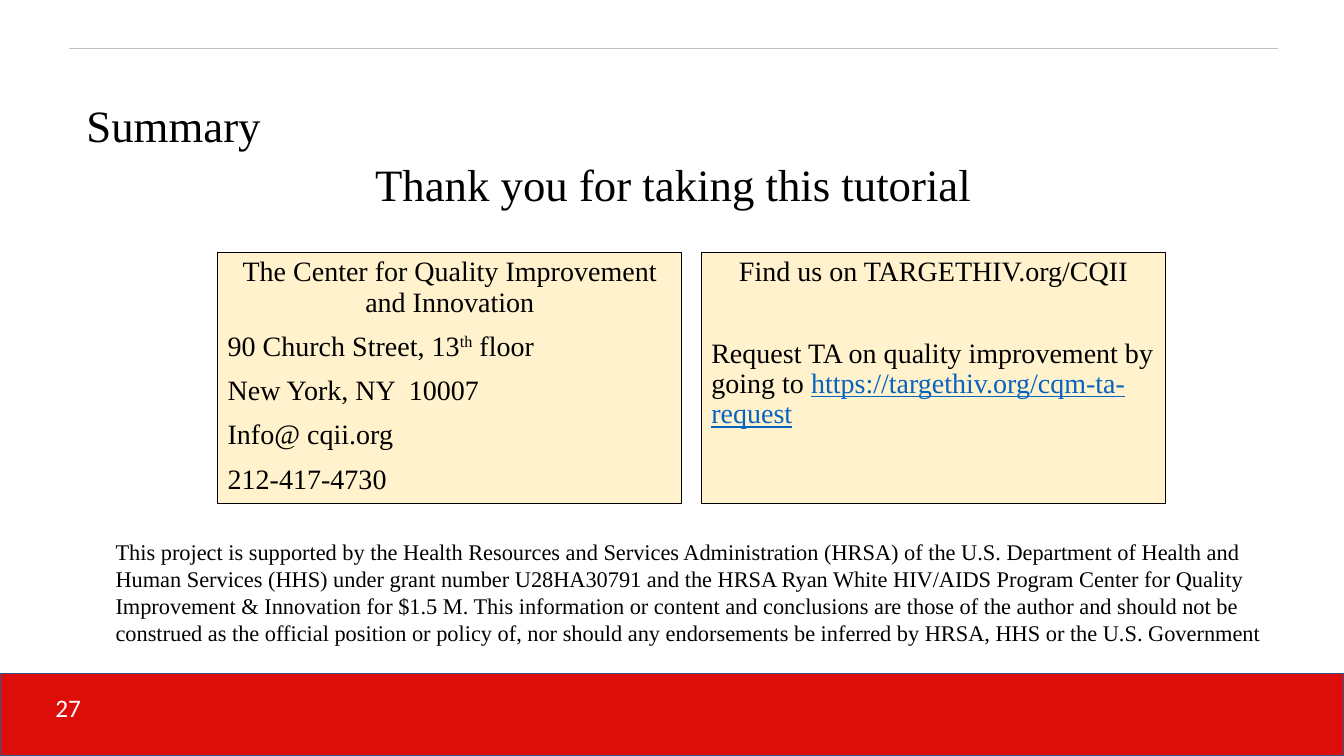
"""Build the closing summary slide with contact boxes and a funding statement."""
from lxml.etree import SubElement
from pptx import Presentation
from pptx.dml.color import RGBColor
from pptx.enum.shapes import MSO_CONNECTOR, MSO_SHAPE
from pptx.enum.text import MSO_ANCHOR, MSO_AUTO_SIZE, PP_ALIGN
from pptx.oxml.ns import qn
from pptx.util import Pt

THEME = {
    "serif": "Times New Roman", "sans": "Calibri",
    "heading": Pt(32), "body": Pt(20), "number": Pt(18), "note": Pt(16),
    "black": RGBColor.from_string("000000"), "white": RGBColor.from_string("FFFFFF"),
    "red": RGBColor.from_string("DD0E09"), "navy": RGBColor.from_string("325491"),
    "cream": RGBColor.from_string("FFF2CC"), "grey": RGBColor.from_string("BFBFBF"),
    "link": RGBColor.from_string("0563C1"),
}
LEFT, CENTER = PP_ALIGN.LEFT, PP_ALIGN.CENTER


def add_box(s, at, fill, line, width):
    """Add a filled and outlined rectangle."""
    box = s.shapes.add_shape(MSO_SHAPE.RECTANGLE, *map(Pt, at))
    box.shadow.inherit = False
    box.fill.solid()
    box.fill.fore_color.rgb = THEME[fill]
    box.line.color.rgb = THEME[line]
    box.line.width = Pt(width)
    return box


def write(sp, paragraphs, size, color="black", font="serif", spacing=0.9, anchor=MSO_ANCHOR.TOP):
    """Fill a shape with (alignment, space before, runs) paragraphs."""
    tf = sp.text_frame
    frame = {"word_wrap": True, "auto_size": MSO_AUTO_SIZE.NONE, "vertical_anchor": anchor}
    for name, value in frame.items():
        setattr(tf, name, value)
    for i, (align, before, runs) in enumerate(paragraphs):
        p = tf.add_paragraph() if i else tf.paragraphs[0]
        p.alignment, p.space_before, p.line_spacing = align, Pt(before), spacing
        for text, style in runs:
            r = p.add_run()
            r.text = text
            look = {"name": THEME[font], "size": THEME[size], "underline": style == "link"}
            for name, value in look.items():
                setattr(r.font, name, value)
            r.font.color.rgb = THEME["link" if style == "link" else color]
            if style == "super":
                r.font._element.set("baseline", "30000")


prs = Presentation()
prs.slide_width, prs.slide_height = Pt(960), Pt(540)
s = prs.slides.add_slide(prs.slide_layouts[5])

add_box(s, (0, 481, 960, 59), "red", "navy", 1)
rule = s.shapes.add_connector(MSO_CONNECTOR.STRAIGHT, Pt(49), Pt(34.5), Pt(913), Pt(34.5))
rule.line.color.rgb = THEME["grey"]
rule.line.width = Pt(0.5)
SubElement(rule._element.spPr, qn("a:effectLst"))

title = s.shapes.title
for name, value in {"left": 54.5, "top": 62.5, "width": 828, "height": 58.5}.items():
    setattr(title, name, Pt(value))
write(title, [(LEFT, 0, [("Summary", "")])], "heading", anchor=MSO_ANCHOR.MIDDLE)

contact = [
    (CENTER, 0, [("The Center for Quality Improvement and Innovation", "")]),
    (LEFT, 10, [("90 Church Street, 13", ""), ("th", "super"), (" floor", "")]),
    (LEFT, 10, [("New York, NY  10007", "")]),
    (LEFT, 10, [("Info@ cqii.org", "")]),
    (LEFT, 10, [("212-417-4730", "")]),
]
online = [
    (CENTER, 0, [("Find us on TARGETHIV.org/CQII", "")]),
    (LEFT, 36.5, [("Request TA on quality improvement by going to ", ""),
                  ("https://targethiv.org/cqm-ta-request", "link")]),
]
for i, paragraphs in enumerate((contact, online)):
    box = add_box(s, (155.5 + i * 345.5, 180.5, 331.5, 179.5), "cream", "black", 0.75)
    write(box, paragraphs, "body")

funding = (
    "This project is supported by the Health Resources and Services Administration (HRSA) "
    "of the U.S. Department of Health and Human Services (HHS) under grant number U28HA30791 "
    "and the HRSA Ryan White HIV/AIDS Program Center for Quality Improvement & Innovation "
    "for $1.5 M. This information or content and conclusions are those of the author and "
    "should not be construed as the official position or policy of, nor should any "
    "endorsements be inferred by HRSA, HHS or the U.S. Government"
)
texts = [
    ((157, 113, 648, 67.5), "Thank you for taking this tutorial", CENTER,
     {"size": "heading"}),
    ((75.5, 381, 833, 85), funding, LEFT, {"size": "note", "spacing": 1.0}),
    ((27.5, 491, 42.5, 29), "27", CENTER,
     {"size": "number", "color": "white", "font": "sans", "spacing": 1.0}),
]
for at, text, align, look in texts:
    write(s.shapes.add_textbox(*map(Pt, at)), [(align, 0, [(text, "")])], **look)

prs.save("out.pptx")
